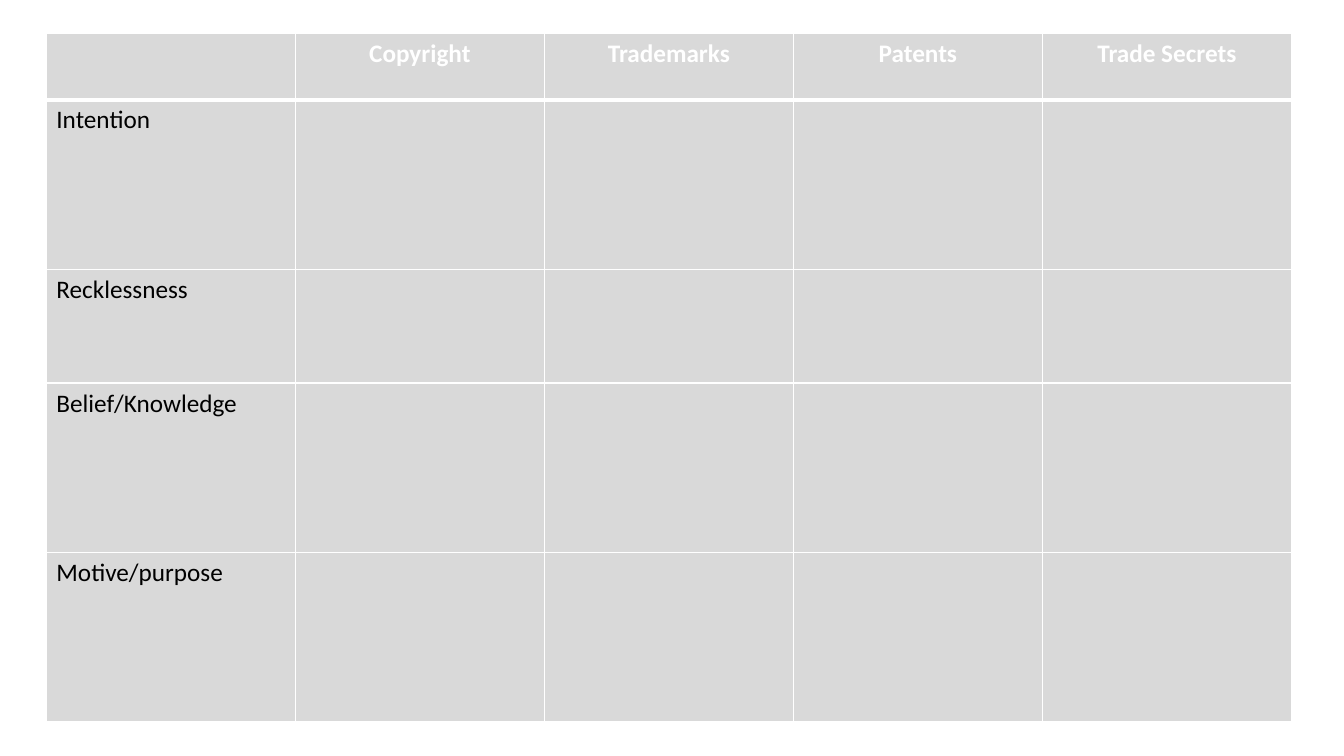
from lxml.etree import SubElement
from pptx import Presentation
from pptx.dml.color import RGBColor
from pptx.enum.text import PP_ALIGN
from pptx.oxml.ns import qn
from pptx.util import Inches, Pt

WHITE, BLACK, GREY = "FFFFFF", "000000", "D9D9D9"
HEADINGS = ["", "Copyright", "Trademarks", "Patents", "Trade Secrets"]
MENTAL_STATES = ["Intention", "Recklessness", "Belief/Knowledge", "Motive/purpose"]
ROW_HEIGHTS = [0.66, 1.68, 1.13, 1.68, 1.68]
COL_WIDTH = 2.47


def rgb(value):
    return RGBColor.from_string(value)


def fill_cell(cell, color):
    cell.fill.solid()
    cell.fill.fore_color.rgb = rgb(color)


def set_borders(cell, color, **widths):
    tc_pr = cell._tc.get_or_add_tcPr()
    for index, side in enumerate("LRTB"):
        ln = SubElement(tc_pr, qn(f"a:ln{side}"), w=str(Pt(widths.get(side, 1))))
        solid = SubElement(ln, qn("a:solidFill"))
        SubElement(solid, qn("a:srgbClr"), val=color)
        tc_pr.remove(ln)
        tc_pr.insert(index, ln)


def write_text(cell, text, color=BLACK, bold=False, align=PP_ALIGN.LEFT, size=18):
    p = cell.text_frame.paragraphs[0]
    p.alignment = align
    p.font.size = Pt(size)
    if text:
        r = p.add_run()
        r.text = text
        r.font.name = "Calibri"
        r.font.size = Pt(size)
        r.font.bold = bold
        r.font.color.rgb = rgb(color)


def add_grid(s, rows, left, top):
    col_count = len(rows[0])
    frame = s.shapes.add_table(
        len(rows), col_count, Inches(left), Inches(top),
        Inches(COL_WIDTH * col_count), Inches(sum(ROW_HEIGHTS)))
    table = frame.table
    table.horz_banding = False
    for col in table.columns:
        col.width = Inches(COL_WIDTH)
    for i, (row, height) in enumerate(zip(rows, ROW_HEIGHTS)):
        table.rows[i].height = Inches(height)
        for j, text in enumerate(row):
            cell = table.cell(i, j)
            fill_cell(cell, GREY)
            set_borders(cell, WHITE, B=3 if i == 0 else 1, T=3 if i == 1 else 1)
            if i == 0:
                write_text(cell, text, color=WHITE, bold=True, align=PP_ALIGN.CENTER)
            else:
                write_text(cell, text)


def main():
    prs = Presentation()
    prs.slide_width = Inches(13.33)
    prs.slide_height = Inches(7.5)
    s = prs.slides.add_slide(prs.slide_layouts[6])
    blanks = [""] * (len(HEADINGS) - 1)
    rows = [HEADINGS] + [[state] + blanks for state in MENTAL_STATES]
    add_grid(s, rows, 0.46, 0.33)
    prs.save("out.pptx")


if __name__ == "__main__":
    main()
